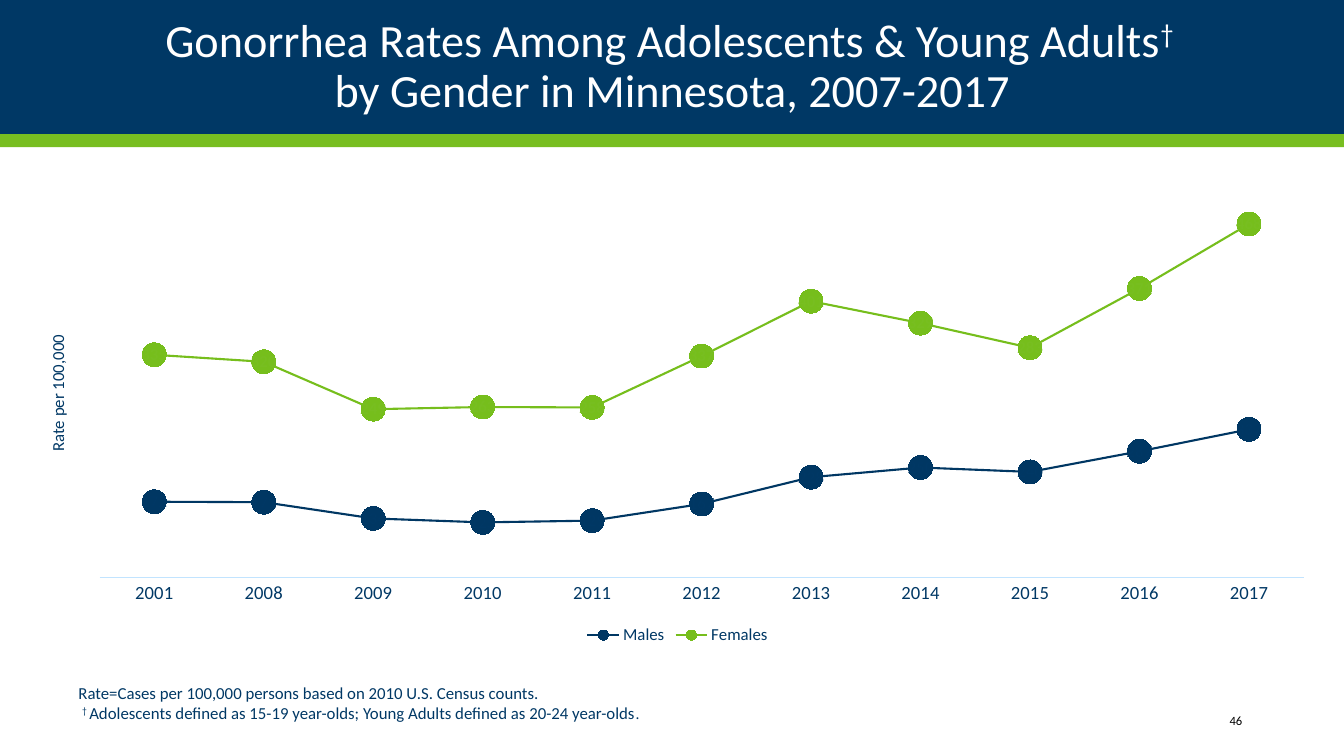
from lxml import etree
from pptx import Presentation
from pptx.chart.data import CategoryChartData
from pptx.dml.color import RGBColor
from pptx.enum.chart import (XL_CHART_TYPE, XL_LABEL_POSITION, XL_LEGEND_POSITION,
                             XL_MARKER_STYLE, XL_TICK_MARK)
from pptx.enum.shapes import MSO_SHAPE
from pptx.enum.text import MSO_ANCHOR, PP_ALIGN
from pptx.util import Inches, Pt

LINE_CHART = XL_CHART_TYPE.LINE_MARKERS_STACKED
LABEL_CENTER = XL_LABEL_POSITION.CENTER
LEGEND_BOTTOM = XL_LEGEND_POSITION.BOTTOM
CIRCLE = XL_MARKER_STYLE.CIRCLE
NO_TICK = XL_TICK_MARK.NONE
RECTANGLE = MSO_SHAPE.RECTANGLE
TOP, MIDDLE = MSO_ANCHOR.TOP, MSO_ANCHOR.MIDDLE
LEFT, CENTER, RIGHT = PP_ALIGN.LEFT, PP_ALIGN.CENTER, PP_ALIGN.RIGHT

NAVY = RGBColor(0x00, 0x38, 0x65)
GREEN = RGBColor(0x78, 0xBE, 0x21)
MALES_NAVY = RGBColor(0x00, 0x37, 0x63)
FEMALES_GREEN = RGBColor(0x76, 0xBE, 0x1C)
PALE_BLUE = RGBColor(0xC2, 0xE4, 0xFF)
WHITE = RGBColor(0xFF, 0xFF, 0xFF)
BLACK = RGBColor(0x00, 0x00, 0x00)

CHART_NS = "http://schemas.openxmlformats.org/drawingml/2006/chart"
BREAK = None
YEARS = ["2001"] + [str(year) for year in range(2008, 2018)]
RATES = [
    ("Males", [172, 171, 134, 125, 129, 167, 228, 250, 240, 287, 337], MALES_NAVY, NAVY),
    ("Females", [335, 320, 249, 263, 258, 337, 401, 329, 283, 371, 468], FEMALES_GREEN, GREEN),
]


class RateSlide:
    font_name = "Calibri"

    def __init__(self, presentation):
        self.slide = presentation.slides.add_slide(presentation.slide_layouts[5])
        self.shapes = self.slide.shapes

    def style_font(self, font, size, color, bold=False):
        font.name = self.font_name
        font.size = Pt(size)
        font.color.rgb = color
        font.bold = bold

    def band(self, top, height, color):
        band = self.shapes.add_shape(RECTANGLE, 0, Inches(top), Inches(13.33), Inches(height))
        band.shadow.inherit = False
        band.fill.solid()
        band.fill.fore_color.rgb = color
        band.line.fill.background()

    def add_runs(self, frame, pieces, size, color, align, anchor):
        frame.word_wrap = True
        frame.vertical_anchor = anchor
        paragraph = frame.paragraphs[0]
        paragraph.alignment = align
        for piece in pieces:
            if piece is BREAK:
                paragraph.add_line_break()
                continue
            run = paragraph.add_run()
            run.text = piece
            self.style_font(run.font, size, color)
            if piece.startswith("†"):
                run.font._element.set("baseline", "30000")
        return paragraph

    def title(self, box, pieces):
        title = self.shapes.title
        title.left, title.top, title.width, title.height = map(Inches, box)
        self.add_runs(title.text_frame, pieces, 33, WHITE, CENTER, MIDDLE).line_spacing = 0.9
        self.shapes._spTree.append(title._element)

    def text(self, box, pieces, size, color, align, anchor):
        holder = self.shapes.add_textbox(*map(Inches, box))
        return self.add_runs(holder.text_frame, pieces, size, color, align, anchor)

    def rate_chart(self, box, axis_title):
        data = CategoryChartData()
        data.categories = YEARS
        for name, values, _, _ in RATES:
            data.add_series(name, values)
        chart = self.shapes.add_chart(LINE_CHART, *map(Inches, box), data).chart
        self.style_font(chart.font, 10, NAVY)
        chart.has_title = False
        chart.has_legend = True
        chart.legend.position = LEGEND_BOTTOM
        chart.legend.include_in_layout = False
        self.style_font(chart.legend.font, 12, NAVY)
        chart.plots[0].vary_by_categories = False
        self.axes(chart, axis_title)
        for series, (_, _, color, label_color) in zip(chart.plots[0].series, RATES):
            self.rate_line(series, color, label_color)
        self.plot_layout(chart, x=0.057, y=0.025, w=0.923, h=0.825)

    def axes(self, chart, axis_title):
        years = chart.category_axis
        years.major_tick_mark = years.minor_tick_mark = NO_TICK
        years.format.line.color.rgb = PALE_BLUE
        years.format.line.width = Pt(0.75)
        self.style_font(years.tick_labels.font, 13.3, NAVY)
        rates = chart.value_axis
        rates.minimum_scale, rates.maximum_scale = 0, 900
        rates.has_major_gridlines = False
        rates.visible = False
        caption = rates.axis_title.text_frame.paragraphs[0].add_run()
        caption.text = axis_title
        self.style_font(caption.font, 12, NAVY)

    def rate_line(self, series, color, label_color):
        series.smooth = False
        series.format.line.color.rgb = color
        series.format.line.width = Pt(1.5)
        marker = series.marker
        marker.style = CIRCLE
        marker.size = 17
        marker.format.fill.solid()
        marker.format.fill.fore_color.rgb = WHITE
        marker.format.line.color.rgb = color
        labels = series.data_labels
        labels.show_value = True
        labels.position = LABEL_CENTER
        self.style_font(labels.font, 12, label_color, bold=True)

    def plot_layout(self, chart, **fractions):
        plot_area = chart._chartSpace.chart.plotArea
        for old in plot_area.findall(f"{{{CHART_NS}}}layout"):
            plot_area.remove(old)
        layout = etree.Element(f"{{{CHART_NS}}}layout")
        manual = etree.SubElement(layout, f"{{{CHART_NS}}}manualLayout")
        settings = {"layoutTarget": "inner", "xMode": "edge", "yMode": "edge", **fractions}
        for tag, value in settings.items():
            etree.SubElement(manual, f"{{{CHART_NS}}}{tag}").set("val", str(value))
        plot_area.insert(0, layout)


def main():
    presentation = Presentation()
    presentation.slide_width = Inches(13.33)
    presentation.slide_height = Inches(7.5)
    page = RateSlide(presentation)
    page.band(0, 1.33, NAVY)
    page.band(1.33, 0.13, GREEN)
    page.title((0.92, 0.17, 11.5, 1),
               ["Gonorrhea Rates Among Adolescents & Young Adults", "† ", BREAK,
                "by Gender in Minnesota, 2007-2017"])
    page.rate_chart((0.25, 1.69, 12.94, 4.75), "Rate per 100,000")
    footnote = page.text(
        (0.68, 6.72, 12.13, 0.63),
        ["Rate=Cases per 100,000 persons based on 2010 U.S. Census counts. ", BREAK, " ", "† ",
         "Adolescents defined as 15-19 year-olds; Young Adults defined as 20-24 year-olds", "."],
        12, NAVY, LEFT, TOP)
    footnote.space_before = footnote.space_after = Pt(7.5)
    footnote.runs[-1].font.size = Pt(11.1)
    page.text((10.82, 6.95, 1.6, 0.4), ["46"], 9, BLACK, RIGHT, MIDDLE)
    presentation.save("out.pptx")


if __name__ == "__main__":
    main()
